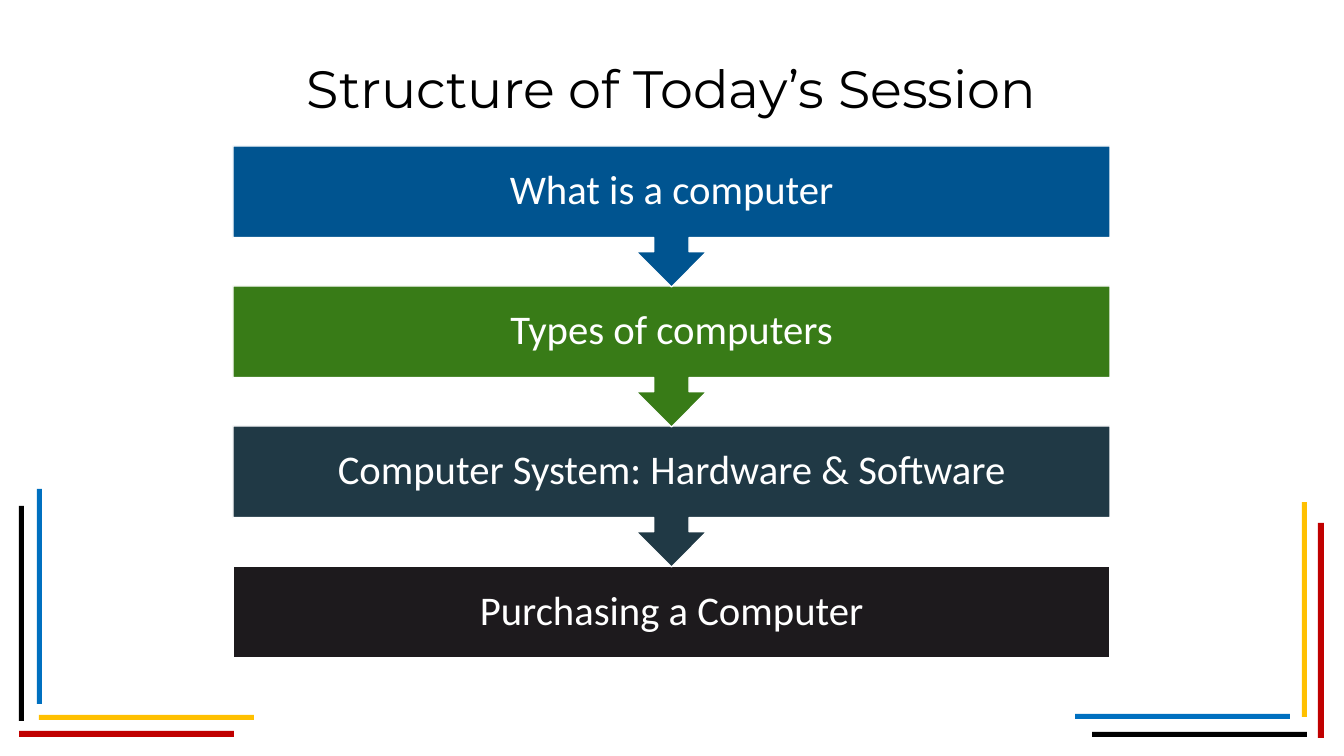
from pptx import Presentation
from pptx.dml.color import RGBColor
from pptx.enum.shapes import MSO_SHAPE as SHAPE
from pptx.enum.text import MSO_ANCHOR as ANCHOR, PP_ALIGN as ALIGN
from pptx.util import Pt

PX = 9676
BAR_LENGTH = 215
STEPS = [
    ("What is a computer", "005490"),
    ("Types of computers", "387B17"),
    ("Computer System: Hardware & Software", "203945"),
    ("Purchasing a Computer", "1D1A1D"),
]
LEFT_BARS = [
    (0, 17, 5, BAR_LENGTH, "000000"),
    (0, 242, BAR_LENGTH, 6, "C00000"),
    (20, 226, BAR_LENGTH, 5, "FFC000"),
    (18, 0, 5, BAR_LENGTH, "0070C0"),
]
RIGHT_BARS = [
    (17, 230, BAR_LENGTH, 5, "000000"),
    (243, 21, 6, BAR_LENGTH, "C00000"),
    (227, 0, 5, BAR_LENGTH, "FFC000"),
    (0, 212, BAR_LENGTH, 5, "0070C0"),
]


def px(*values):
    return [value * PX for value in values]


def color(value):
    return RGBColor.from_string(value)


def set_all(target, formats):
    for name, value in formats.items():
        setattr(target, name, value)


def write(shape, text, font, size, fill, **paragraph):
    tf = shape.text_frame
    set_all(tf, {"word_wrap": True, "vertical_anchor": ANCHOR.MIDDLE})
    p = tf.paragraphs[0]
    set_all(p, {"alignment": ALIGN.CENTER, **paragraph})
    r = p.add_run()
    r.text = text
    set_all(r.font, {"name": font, "size": Pt(size)})
    r.font.color.rgb = color(fill)


def add_block(s, kind, box, fill):
    sp = s.shapes.add_shape(kind, *px(*box))
    sp.shadow.inherit = False
    sp.fill.solid()
    sp.fill.fore_color.rgb = color(fill)
    return sp


def add_title(s, box):
    title = s.shapes.title
    set_all(title, dict(zip(("left", "top", "width", "height"), px(*box))))
    write(title, "Structure of Today’s Session", "Montserrat", 40, "000000")


def add_corner(s, left, top, bars):
    for x, y, width, height, fill in bars:
        bar = add_block(s, SHAPE.RECTANGLE, (left + x, top + y, width, height), fill)
        bar.line.fill.background()


def add_steps(s, left, top, width, height):
    body = 92
    pitch = (height - body) // (len(STEPS) - 1)
    last = len(STEPS) - 1
    for i, (text, fill) in reversed(list(enumerate(STEPS))):
        kind = SHAPE.RECTANGLE if i == last else SHAPE.DOWN_ARROW_CALLOUT
        step_height = body if i == last else pitch + 1
        step = add_block(s, kind, (left, top + i * pitch, width, step_height), fill)
        step.line.color.rgb = color("FFFFFF")
        step.line.width = Pt(1)
        margins = ("margin_left", "margin_top", "margin_right", "margin_bottom")
        set_all(step.text_frame, dict.fromkeys(margins, 23 * PX))
        write(step, text, "Calibri", 31, "FFFFFF", line_spacing=0.9)


def main():
    prs = Presentation()
    set_all(prs, dict(zip(("slide_width", "slide_height"), px(1344, 756))))
    s = prs.slides.add_slide(prs.slide_layouts[5])
    add_corner(s, 19, 489, LEFT_BARS)
    add_corner(s, 1075, 502, RIGHT_BARS)
    add_title(s, (60, 28, 1223, 118))
    add_steps(s, 233, 146, 877, 512)
    prs.save("out.pptx")


if __name__ == "__main__":
    main()
